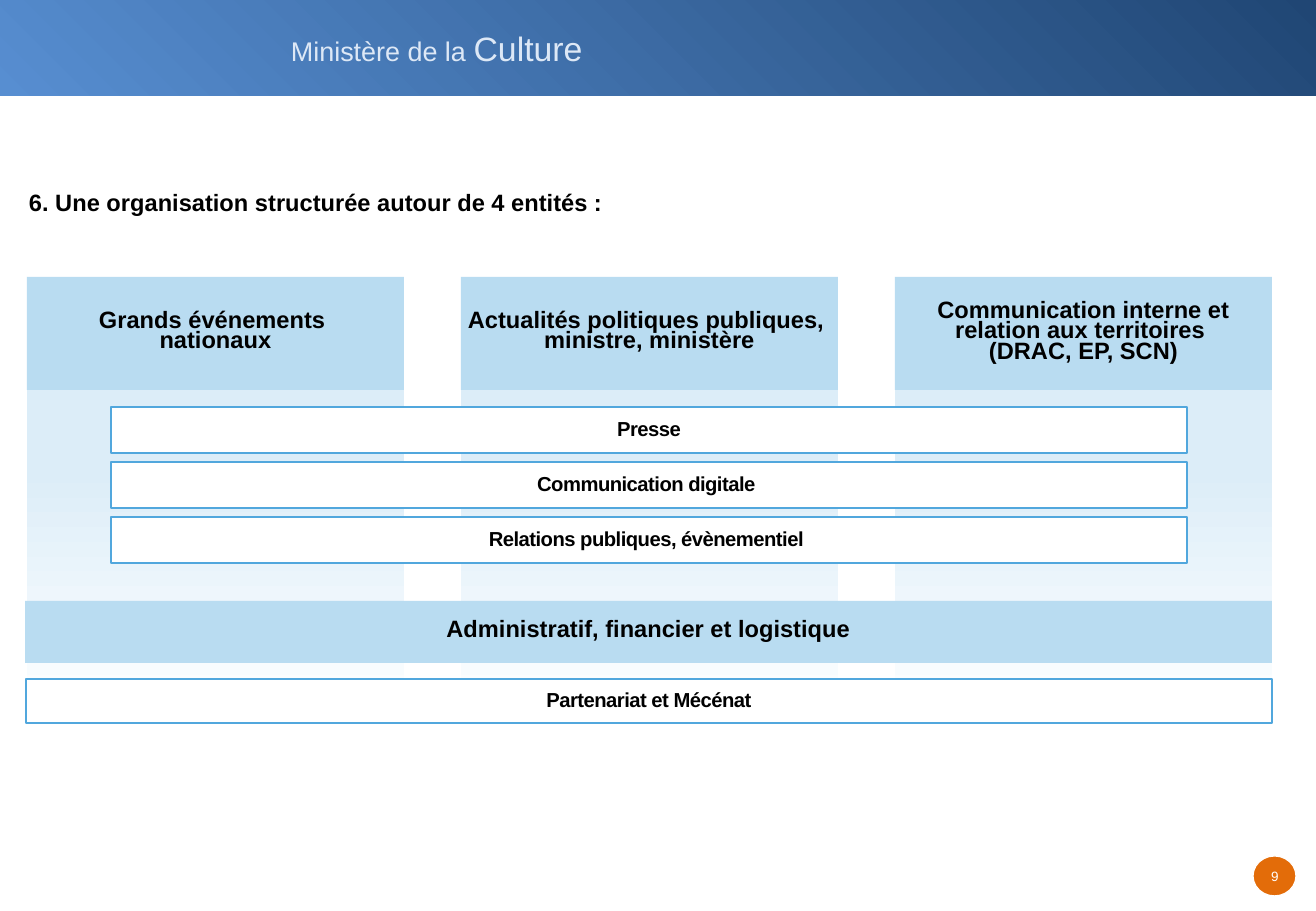
from pptx import Presentation
from pptx.dml.color import RGBColor
from pptx.enum.shapes import MSO_SHAPE
from pptx.enum.text import MSO_ANCHOR, PP_ALIGN
from pptx.util import Pt

RECT, OVAL = MSO_SHAPE.RECTANGLE, MSO_SHAPE.OVAL
LEFT, MID = PP_ALIGN.LEFT, PP_ALIGN.CENTER
TOP, CENTRE = MSO_ANCHOR.TOP, MSO_ANCHOR.MIDDLE

PX = 7526  # EMU in one px
BLACK, WHITE = "000000", "FFFFFF"
SKY, PALE, EDGE = "B9DCF1", "DCEDF8", "51A7DD"

HEADS = [
    "Grands événements \vnationaux",
    "Actualités politiques publiques, \vministre, ministère",
    "Communication interne et relation aux territoires \v(DRAC, EP, SCN)",
]
TEAMS = ["Presse", "Communication digitale ", "Relations publiques, évènementiel "]


def rgb(code):
    return RGBColor.from_string(code)


def emu(box):
    return [n * PX for n in box]


def paint(fill, color):
    fill.solid()
    fill.fore_color.rgb = rgb(color)


def fade(fill, stops, angle):
    fill.gradient()
    fill.gradient_angle = angle
    for stop, (place, color) in zip(fill.gradient_stops, stops):
        stop.position = place
        stop.color.rgb = rgb(color)


def block(slide, box, color=None, edge=None, kind=RECT):
    """Add a preset shape without shadow; no edge means no line."""
    shape = slide.shapes.add_shape(kind, *emu(box))
    shape.shadow.inherit = False
    if color:
        paint(shape.fill, color)
    if edge:
        paint(shape.line.fill, edge)
        shape.line.width = Pt(0.75)
    else:
        shape.line.fill.background()
    return shape


def style(runs, size, color=BLACK, bold=True, track=0):
    look = {"name": "Arial", "size": Pt(size), "bold": bold}
    for run in runs:
        for key, value in look.items():
            setattr(run.font, key, value)
        run.font.color.rgb = rgb(color)
        if track:
            run._r.get_or_add_rPr().set("spc", str(track))


def setup(frame, pad, wrap=True, anchor=TOP, align=LEFT):
    """Set margins, wrapping and alignment; return the first paragraph."""
    side, edge = pad
    form = {
        "margin_left": side * PX, "margin_right": side * PX,
        "margin_top": edge * PX, "margin_bottom": edge * PX,
        "word_wrap": wrap, "vertical_anchor": anchor,
    }
    for key, value in form.items():
        setattr(frame, key, value)
    para = frame.paragraphs[0]
    para.alignment = align
    return para


def label(shape, text, size, side=0, track=0):
    para = setup(shape.text_frame, (side, 0), anchor=CENTRE, align=MID)
    para.line_spacing = Pt(12)
    para.text = text
    style(para.runs, size, track=track)


def band(slide, box, text):
    label(block(slide, box, SKY), text, 14)


def bar(slide, box, text):
    label(block(slide, box, WHITE, EDGE), text, 12, side=5, track=-30)


def note(slide, box, parts, pad=(12, 6), wrap=True, align=LEFT, **look):
    """Add a text box; parts are (text, size) pairs on one line."""
    frame = slide.shapes.add_textbox(*emu(box)).text_frame
    para = setup(frame, pad, wrap, align=align)
    for text, size in parts:
        run = para.add_run()
        run.text = text
        style([run], size, **look)


def banner(slide, box):
    left, top, _, _ = box
    fade(block(slide, box).fill, [(0, "204674"), (1, "578ED1")], 225)
    note(slide, (left + 279, top + 22, 320, 53),
         [("Ministère de la ", 16), ("Culture", 20)],
         wrap=False, color="DDE8F6", bold=False)


def badge(slide, box):
    left, top, wide, _ = box
    block(slide, box, "E36C09", WHITE, OVAL)
    note(slide, (left + 8, top + 6, wide - 15, 28), [("9", 8)],
         pad=(6, 6), wrap=False, align=MID, color=WHITE, bold=False)


def chart(slide, box):
    """Place three columns crossed by the shared teams."""
    left, top, wide, high = box
    col, head = 377, 113
    step = (wide - col) // 2
    spots = [left + step * i for i in range(len(HEADS))]
    for x in spots:
        body = block(slide, (x, top + 31, col, 411))
        fade(body.fill, [(0.39, PALE), (1, WHITE)], 270)
    for x, text in zip(spots, HEADS):
        band(slide, (x, top, col, head), text)
    band(slide, (left - 2, top + 324, wide + 2, 62),
         "Administratif, financier et logistique")
    for i, text in enumerate(TEAMS):
        bar(slide, (left + 84, top + 130 + 55 * i, wide - 169, 46), text)
    bar(slide, (left - 1, top + high - 44, wide + 1, 44), "Partenariat et Mécénat")


def main():
    deck = Presentation()
    deck.slide_width, deck.slide_height = emu((1316, 911))
    slide = deck.slides.add_slide(deck.slide_layouts[6])
    banner(slide, (0, 0, 1316, 96))
    badge(slide, (1253, 856, 43, 40))
    note(slide, (17, 182, 1205, 41),
         [("6. Une organisation structurée autour de 4 entités :", 14)])
    chart(slide, (27, 277, 1245, 446))
    deck.save("out.pptx")


if __name__ == "__main__":
    main()
